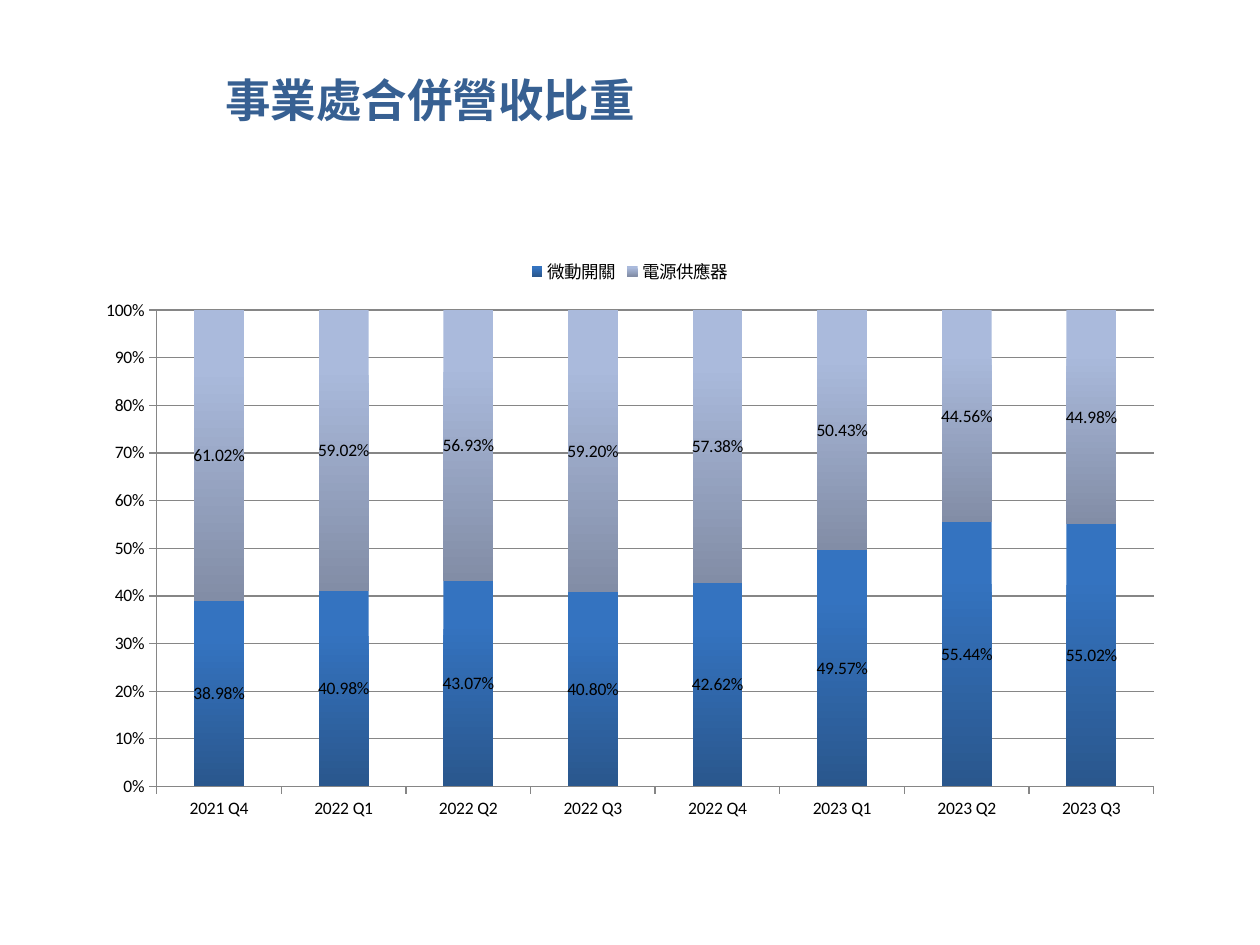
from pptx import Presentation
from pptx.chart.data import CategoryChartData
from pptx.dml.color import RGBColor
from pptx.enum.chart import XL_CHART_TYPE, XL_LEGEND_POSITION, XL_TICK_MARK
from pptx.util import Pt

STACKED = XL_CHART_TYPE.COLUMN_STACKED
LEGEND_TOP = XL_LEGEND_POSITION.TOP
TICK_OUT = XL_TICK_MARK.OUTSIDE
TICK_NONE = XL_TICK_MARK.NONE

TITLE_BLUE = RGBColor(0x37, 0x60, 0x92)
BLACK = RGBColor(0, 0, 0)
GRAY = RGBColor(0x86, 0x86, 0x86)
SWITCH_COLORS = RGBColor(0x34, 0x73, 0xC0), RGBColor(0x2A, 0x57, 0x8D)
POWER_COLORS = RGBColor(0xAA, 0xBA, 0xDC), RGBColor(0x82, 0x8D, 0xA6)

QUARTERS = ["2021 Q4", "2022 Q1", "2022 Q2", "2022 Q3",
            "2022 Q4", "2023 Q1", "2023 Q2", "2023 Q3"]
SWITCH_SHARES = [0.3898, 0.4098, 0.4307, 0.408, 0.4262, 0.4957, 0.5544, 0.5502]
DIVISIONS = [
    ("微動開關", SWITCH_SHARES, SWITCH_COLORS),
    ("電源供應器", [round(1 - v, 4) for v in SWITCH_SHARES], POWER_COLORS),
]


def add_title(slide, text):
    tf = slide.shapes.add_textbox(Pt(121.7), Pt(37.4), Pt(544.3), Pt(38.9)).text_frame
    tf.word_wrap = True
    tf.text = text
    font = tf.paragraphs[0].runs[0].font
    font.name, font.size, font.bold = "Times New Roman", Pt(26), True
    font.color.rgb = TITLE_BLUE


def style_line(line):
    line.color.rgb = GRAY
    line.width = Pt(0.75)


def style_series(series, colors):
    """Shade the columns from top to bottom and label them with their share."""
    fill = series.format.fill
    fill.gradient()
    fill.gradient_angle = 270
    for stop, color, position in zip(fill.gradient_stops, colors, (0.2, 1)):
        stop.color.rgb = color
        stop.position = position
    labels = series.data_labels
    labels.show_value = True
    labels.number_format = "0.00%"
    labels.number_format_is_linked = False


def style_axes(chart):
    for axis in (chart.category_axis, chart.value_axis):
        axis.major_tick_mark = TICK_OUT
        axis.minor_tick_mark = TICK_NONE
        style_line(axis.format.line)
    axis = chart.value_axis
    axis.minimum_scale, axis.maximum_scale, axis.major_unit = 0, 1, 0.1
    axis.tick_labels.number_format = "0%"
    axis.tick_labels.number_format_is_linked = False
    axis.has_major_gridlines = True
    style_line(axis.major_gridlines.format.line)


def add_share_chart(slide):
    data = CategoryChartData(number_format="0.00%")
    data.categories = QUARTERS
    for name, shares, _ in DIVISIONS:
        data.add_series(name, shares)
    chart = slide.shapes.add_chart(
        STACKED, Pt(48.2), Pt(139.7), Pt(623.5), Pt(334.8), data).chart
    chart.has_title = False
    chart.font.name, chart.font.size = "Calibri", Pt(10)
    chart.font.color.rgb = BLACK
    chart.has_legend = True
    chart.legend.position = LEGEND_TOP
    chart.legend.include_in_layout = False
    plot = chart.plots[0]
    plot.gap_width, plot.overlap = 150, 100
    plot.vary_by_categories = False
    for series, (_, _, colors) in zip(plot.series, DIVISIONS):
        style_series(series, colors)
    style_axes(chart)


def main():
    prs = Presentation()
    prs.slide_width, prs.slide_height = Pt(720), Pt(540)
    slide = prs.slides.add_slide(prs.slide_layouts[6])
    add_title(slide, "事業處合併營收比重")
    add_share_chart(slide)
    prs.save("out.pptx")


if __name__ == "__main__":
    main()
